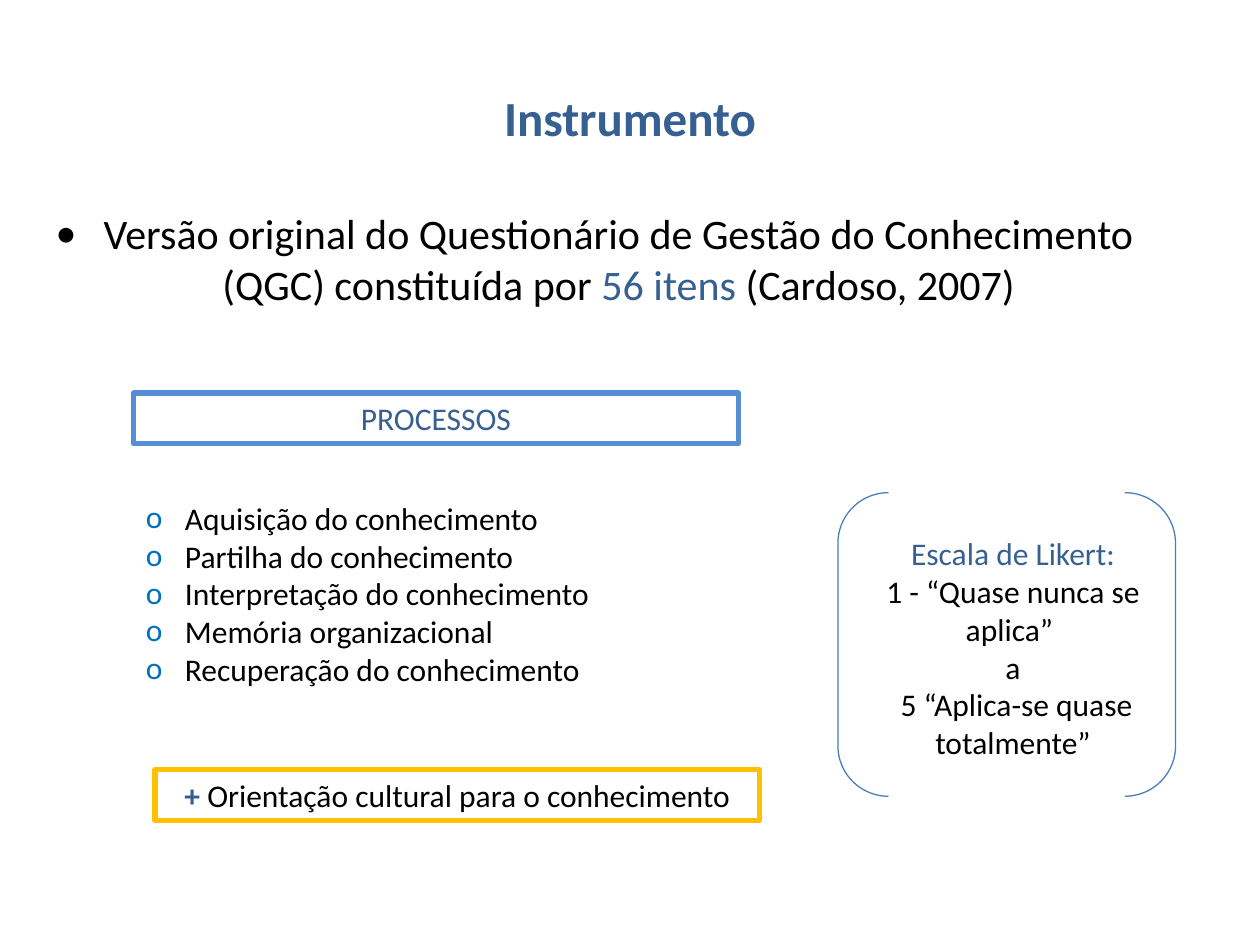
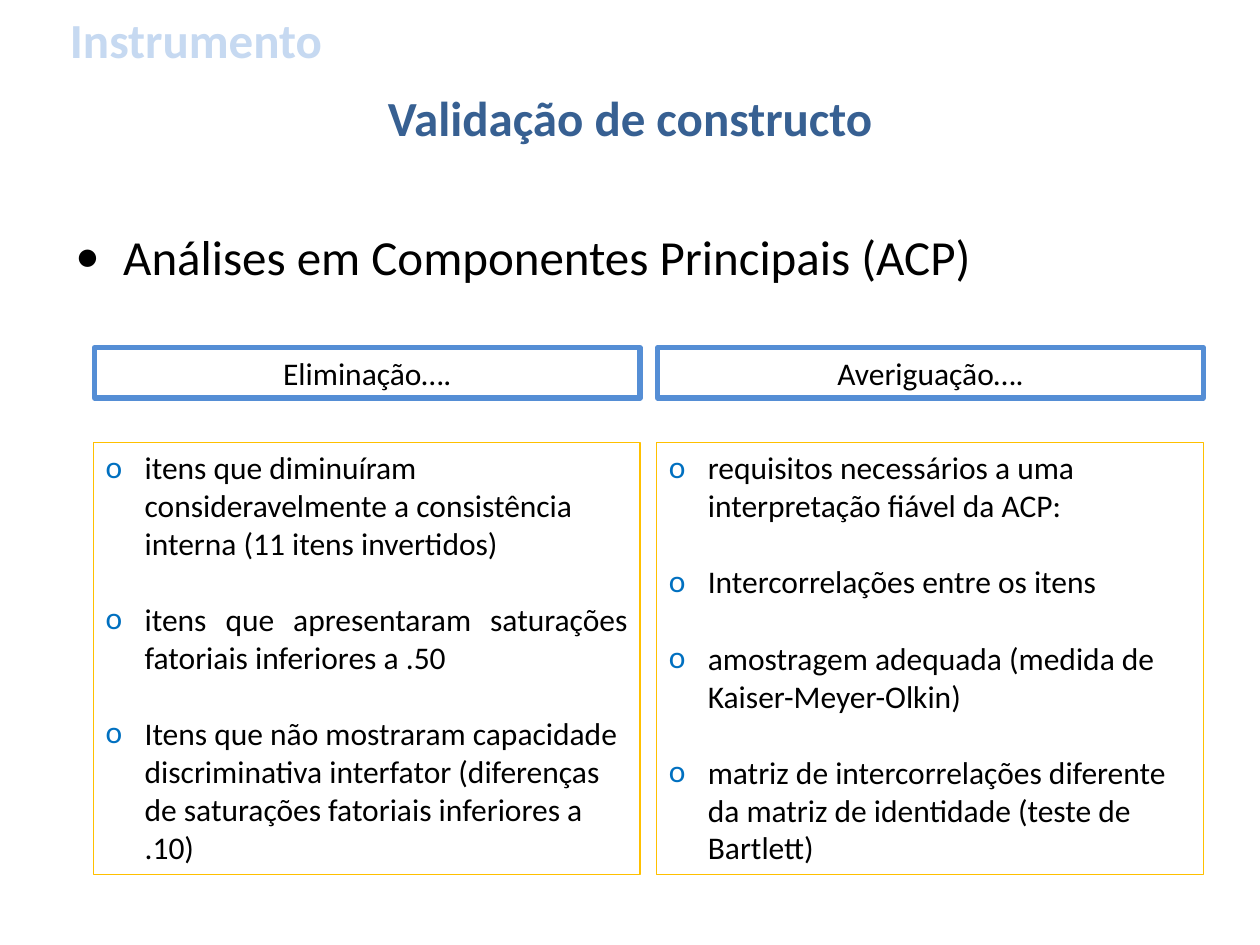
from lxml.etree import SubElement
from pptx import Presentation
from pptx.dml.color import RGBColor
from pptx.enum.shapes import MSO_SHAPE as Shape
from pptx.enum.text import MSO_ANCHOR as Anchor, PP_ALIGN as Align
from pptx.oxml.ns import qn
from pptx.util import Pt

PX = 9144
FONT = "Calibri"
BLACK = RGBColor(0, 0, 0)
NAVY = RGBColor(0x37, 0x60, 0x92)
BLUE = RGBColor(0x55, 0x8E, 0xD5)
BRACKET_BLUE = RGBColor(0x4B, 0x7E, 0xBC)
BULLET_BLUE = RGBColor(0x00, 0x70, 0xC0)
PALE_BLUE = RGBColor(0xC6, 0xD9, 0xF1)
GOLD = RGBColor(0xFF, 0xC0, 0x00)
TITLE_SIZE = 28
TEXT_SIZE = 18
LINE_GAP = 22
DOT = ("•", BLACK, 38)
RING = ("o", BULLET_BLUE, 31)


def px(*lengths):
    """Turn px lengths into EMU."""
    return [length * PX for length in lengths]


def set_bullet(paragraph, character, color, indent):
    """Give a paragraph a coloured bullet and a hanging indent."""
    properties = paragraph._p.get_or_add_pPr()
    properties.set("marL", str(indent * PX))
    properties.set("indent", str(-indent * PX))
    bullet_color = SubElement(properties, qn("a:buClr"))
    SubElement(bullet_color, qn("a:srgbClr")).set("val", str(color))
    SubElement(properties, qn("a:buFont")).set("typeface", FONT)
    SubElement(properties, qn("a:buChar")).set("char", character)


def style_font(font, size, color, bold=False):
    """Set the deck font with a size, colour and weight."""
    font.name, font.size, font.bold = FONT, Pt(size), bold
    font.color.rgb = color


def write(shape, texts, size=TEXT_SIZE, color=BLACK, bold=False, align=Align.CENTER,
          bullet=None, gap=0, anchor=Anchor.TOP):
    """Write one paragraph per text; a list holds (text, colour, bold) runs."""
    frame = shape.text_frame
    frame.word_wrap = True
    frame.vertical_anchor = anchor
    for index, text in enumerate(texts):
        paragraph = frame.add_paragraph() if index else frame.paragraphs[0]
        paragraph.alignment = align
        if bullet:
            set_bullet(paragraph, *bullet)
        if index and gap:
            paragraph.space_before = Pt(gap)
        if isinstance(text, str):
            paragraph.add_run().text = text
            style_font(paragraph.font, size, color, bold)
            continue
        for run_text, run_color, run_bold in text:
            run = paragraph.add_run()
            run.text = run_text
            style_font(run.font, size, run_color, run_bold)
    return frame.paragraphs


def add_text(slide, box, texts, **style):
    """Add a wrapping text box."""
    return write(slide.shapes.add_textbox(*px(*box)), texts, **style)


def add_outline(slide, box, color, width=3, kind=Shape.RECTANGLE):
    """Add an unfilled shape with a coloured line."""
    shape = slide.shapes.add_shape(kind, *px(*box))
    shape.shadow.inherit = False
    shape.fill.background()
    shape.line.color.rgb = color
    shape.line.width = Pt(width)
    return shape


def add_titled_slide(presentation, title):
    """Add a title-only slide with the shared title style."""
    slide = presentation.slides.add_slide(presentation.slide_layouts[5])
    shape = slide.shapes.title
    shape.left, shape.top, shape.width, shape.height = px(50, 30, 900, 125)
    write(shape, [title], TITLE_SIZE, NAVY, True, anchor=Anchor.MIDDLE)
    return slide


def add_statement(slide, box, text, size, align):
    """Add the main bulleted statement of a slide."""
    paragraph = add_text(slide, box, [text], size=size, align=align, bullet=DOT)[0]
    paragraph.space_before = Pt(size * 0.2)


def add_column(slide, left, heading, items):
    """Add a heading box above a framed list and return the list paragraphs."""
    write(add_outline(slide, (left + 1, 276, 433, 40), BLUE), [heading])
    frame = add_outline(slide, (left, 351, 434, 343), GOLD, 0.75)
    return write(frame, items, align=Align.LEFT, bullet=RING, gap=LINE_GAP)


def build_instrument(presentation):
    """Build the slide on the questionnaire and its scale."""
    slide = add_titled_slide(presentation, "Instrumento")
    add_statement(slide, (22, 160, 900, 495), [
        ("Versão original do Questionário de Gestão do Conhecimento (QGC) "
         "constituída por ", BLACK, False),
        ("56 itens ", NAVY, False),
        ("(Cardoso, 2007)", BLACK, False),
    ], 24, Align.CENTER)
    write(add_outline(slide, (106, 312, 480, 40), BLUE), ["PROCESSOS"], color=NAVY)
    add_text(slide, (106, 391, 732, 162), [
        "Aquisição do conhecimento",
        "Partilha do conhecimento",
        "Interpretação do conhecimento",
        "Memória organizacional",
        "Recuperação do conhecimento",
    ], align=Align.JUSTIFY, bullet=RING)
    write(add_outline(slide, (123, 611, 480, 40), GOLD), [
        [("+ ", NAVY, True), ("Orientação cultural para o conhecimento", BLACK, False)],
    ])
    add_outline(slide, (665, 391, 268, 241), BRACKET_BLUE, 0.75, Shape.DOUBLE_BRACKET)
    add_text(slide, (689, 419, 230, 192), [
        [("Escala de Likert:", NAVY, False)],
        "1 - “Quase nunca se aplica” ",
        "a",
        " 5 “Aplica-se quase totalmente”",
    ])


def build_validation(presentation):
    """Build the slide on construct validation."""
    slide = add_titled_slide(presentation, "Validação de constructo")
    add_statement(slide, (50, 175, 900, 495), "Análises em Componentes Principais (ACP)",
                  28, Align.LEFT)
    eliminated = add_column(slide, 74, "Eliminação….", [
        "itens que diminuíram consideravelmente a consistência interna "
        "(11 itens invertidos)",
        "itens que apresentaram saturações fatoriais inferiores a .50 ",
        "Itens que não mostraram capacidade discriminativa interfator "
        "(diferenças de saturações fatoriais inferiores a .10)",
    ])
    eliminated[1].alignment = Align.JUSTIFY
    add_column(slide, 521, "Averiguação….", [
        "requisitos necessários a uma interpretação fiável da ACP:",
        "Intercorrelações entre os itens",
        "amostragem adequada (medida de Kaiser-Meyer-Olkin)",
        "matriz de intercorrelações diferente da matriz de identidade "
        "(teste de Bartlett)",
    ])
    add_text(slide, (0, 0, 311, 62), ["Instrumento"], size=TITLE_SIZE, color=PALE_BLUE,
             bold=True, anchor=Anchor.MIDDLE)


def main():
    """Build and save the presentation."""
    presentation = Presentation()
    presentation.slide_width, presentation.slide_height = px(1000, 750)
    build_instrument(presentation)
    build_validation(presentation)
    presentation.save("out.pptx")


if __name__ == "__main__":
    main()
